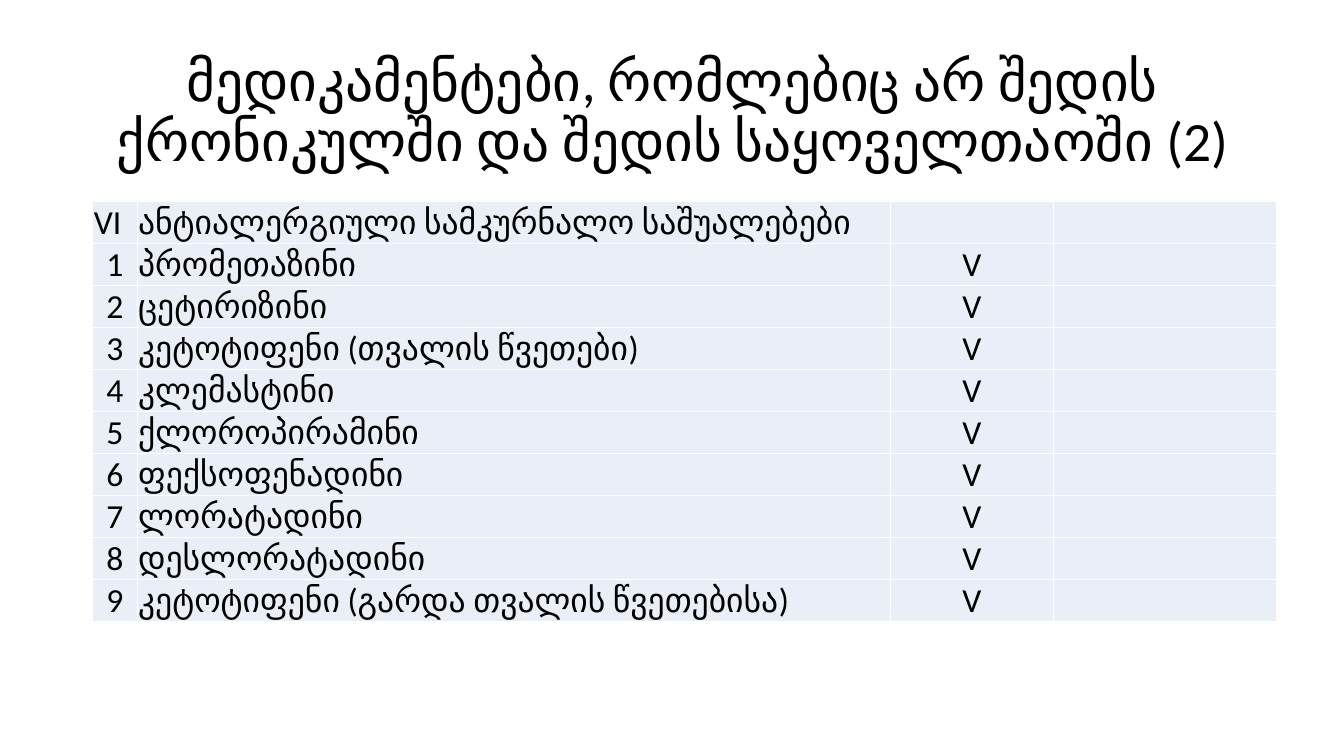
from lxml.etree import SubElement
from pptx import Presentation
from pptx.dml.color import RGBColor
from pptx.enum.text import MSO_ANCHOR as Anchor, MSO_AUTO_SIZE as AutoSize, PP_ALIGN as Align
from pptx.oxml.ns import qn
from pptx.util import Pt

PX = 9144
COLORS = {"text": "000000", "cell": "EAEFF7", "border": "FFFFFF"}
FONT = "Calibri"
TITLE = "მედიკამენტები, რომლებიც არ შედის ქრონიკულში და შედის საყოველთაოში (2)"
GROUP = ("VI", "ანტიალერგიული სამკურნალო საშუალებები")
MEDICINES = [
    "პრომეთაზინი",
    "ცეტირიზინი",
    "კეტოტიფენი (თვალის წვეთები)",
    "კლემასტინი",
    "ქლოროპირამინი",
    "ფექსოფენადინი",
    "ლორატადინი",
    "დესლორატადინი",
    "კეტოტიფენი (გარდა თვალის წვეთებისა)",
]
COLUMN_WIDTHS = [44, 747, 162, 221]
ROW_HEIGHT = 41


def write_text(frame, text, size, align=Align.LEFT, spacing=None):
    paragraph = frame.paragraphs[0]
    paragraph.alignment = align
    paragraph.line_spacing = spacing
    run = paragraph.add_run()
    run.text = text
    run.font.size = Pt(size)
    run.font.name = FONT
    run.font.color.rgb = RGBColor.from_string(COLORS["text"])


def add_title(slide, text):
    title = slide.shapes.title
    title.left, title.top, title.width, title.height = (
        length * PX for length in (92, 40, 1150, 145))
    frame = title.text_frame
    frame.word_wrap = True
    frame.auto_size = AutoSize.NONE
    frame.vertical_anchor = Anchor.MIDDLE
    write_text(frame, text, 39.6, align=Align.CENTER, spacing=0.9)


def add_borders(cell):
    properties = cell._tc.get_or_add_tcPr()
    for side in ("lnL", "lnR", "lnT", "lnB"):
        line = SubElement(properties, qn(f"a:{side}"), w=str(Pt(1)))
        fill = SubElement(line, qn("a:solidFill"))
        SubElement(fill, qn("a:srgbClr"), val=COLORS["border"])


def format_cell(cell, text, align, anchor):
    cell.margin_left = cell.margin_right = cell.margin_top = PX
    cell.margin_bottom = 0
    cell.vertical_anchor = anchor
    add_borders(cell)
    cell.fill.solid()
    cell.fill.fore_color.rgb = RGBColor.from_string(COLORS["cell"])
    if text:
        write_text(cell.text_frame, text, 24, align=align)


def add_medicine_table(slide):
    rows = [(*GROUP, "", "")]
    rows += [(str(number), name, "V", "") for number, name in enumerate(MEDICINES, 1)]
    table = slide.shapes.add_table(
        len(rows), len(COLUMN_WIDTHS), 92 * PX, 200 * PX,
        sum(COLUMN_WIDTHS) * PX, len(rows) * ROW_HEIGHT * PX).table
    table.first_row = table.horz_banding = False
    for column, width in zip(table.columns, COLUMN_WIDTHS):
        column.width = width * PX
    aligns = (Align.CENTER, Align.JUSTIFY, Align.CENTER, Align.LEFT)
    anchors = (Anchor.MIDDLE, Anchor.MIDDLE, Anchor.BOTTOM, Anchor.BOTTOM)
    for row_index, texts in enumerate(rows):
        table.rows[row_index].height = ROW_HEIGHT * PX
        for column_index, text in enumerate(texts):
            align = aligns[column_index] if row_index else Align.LEFT
            format_cell(table.cell(row_index, column_index), text, align, anchors[column_index])


def main():
    presentation = Presentation()
    presentation.slide_width = 1333 * PX
    presentation.slide_height = 750 * PX
    slide = presentation.slides.add_slide(presentation.slide_layouts[5])
    add_title(slide, TITLE)
    add_medicine_table(slide)
    presentation.save("out.pptx")


if __name__ == "__main__":
    main()
